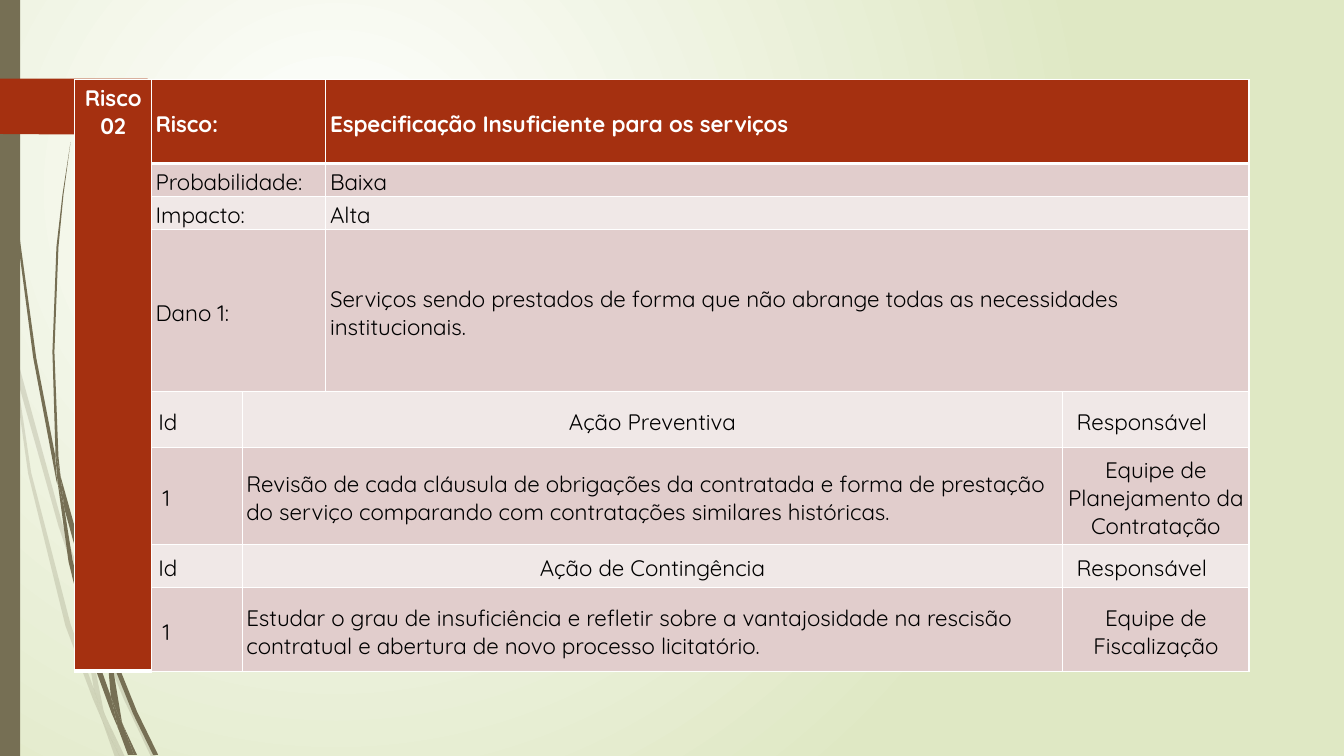
from lxml.etree import SubElement
from pptx import Presentation
from pptx.dml.color import RGBColor
from pptx.enum.shapes import MSO_SHAPE
from pptx.enum.text import MSO_ANCHOR, PP_ALIGN
from pptx.oxml.ns import qn
from pptx.util import Pt

FONT = "Quicksand"
RED, OLIVE, WHITE, BLACK = "A53010", "766F54", "FFFFFF", "000000"
DARK_BAND, LIGHT_BAND = "E1CDCC", "F0E8E7"

# Outlines in hundredths of an inch, the unit that UNIT stands for
UNIT = Pt(0.72)
PALE_STALKS = [
    [(11, 350), (9, 322), (0, 282), (0, 299), (10, 344)],
    [(58, 522), (84, 599), (85, 586), (62, 520), (14, 345), (17, 376)],
    [(92, 607), (88, 596), (88, 610), (123, 694), (150, 751), (155, 751), (127, 692)],
    [(119, 751), (124, 751), (105, 711)],
    [(93, 683), (70, 619), (31, 469), (17, 376), (11, 350), (28, 470), (65, 621),
     (92, 693), (101, 714), (99, 707)],
    [(84, 599), (87, 646), (93, 683), (96, 692), (105, 711), (103, 706), (91, 646),
     (88, 610), (88, 608)],
    [(88, 584), (110, 462), (160, 349), (229, 245), (268, 198), (290, 175), (312, 154),
     (312, 153), (289, 175), (268, 197), (228, 244), (158, 348), (107, 461), (85, 584),
     (85, 586), (88, 596)],
    [(101, 714), (114, 751), (119, 751)],
    [(88, 608), (88, 610), (88, 596), (85, 586), (84, 599)],
    [(96, 692), (93, 683), (99, 707), (101, 714), (119, 751), (105, 711)],
]
DARK_STALKS = [
    [(7, 110), (17, 233), (33, 355), (56, 477), (57, 481), (55, 457), (55, 453),
     (36, 355), (19, 232), (8, 109), (5, 48), (4, 0), (3, 0), (4, 48)],
    [(88, 592), (106, 645), (106, 631), (93, 590), (60, 472), (64, 505)],
    [(113, 649), (110, 641), (111, 656), (132, 708), (152, 749), (157, 749), (136, 706)],
    [(110, 691), (98, 657), (72, 556), (64, 505), (57, 477), (68, 557), (93, 659),
     (111, 708), (117, 722), (116, 717)],
    [(60, 472), (58, 453), (54, 349), (58, 245), (63, 193), (70, 141), (62, 193),
     (56, 245), (52, 349), (55, 449)],
    [(133, 749), (136, 749), (122, 719)],
    [(57, 477), (64, 505), (60, 472), (55, 449), (55, 453)],
    [(111, 633), (125, 552), (158, 476), (205, 406), (231, 374), (245, 359), (261, 344),
     (260, 344), (245, 358), (231, 373), (204, 405), (156, 474), (122, 551), (106, 631),
     (110, 641)],
    [(117, 722), (127, 749), (131, 749)],
    [(106, 645), (110, 691), (116, 706), (122, 719), (121, 716), (111, 656), (109, 651)],
    [(106, 645), (109, 651), (111, 656), (110, 641), (106, 631)],
    [(116, 706), (110, 691), (116, 717), (117, 722), (130, 749), (133, 749), (122, 719)],
]
SIDE_TAG = [(0, 78), (146, 78), (148, 79), (173, 104), (174, 106), (173, 108),
            (148, 133), (146, 134), (0, 133)]

COLUMN_WIDTHS = [54.7, 64.8, 59.8, 526.3, 133.2]
ROW_HEIGHTS = [60, 23.5, 23.5, 115.7, 40, 69.3, 30.7, 60]
# Each row after the red column: (first column, last column, text, left indent)
# An indent of None centres the text
ROWS = [
    [(1, 2, "Risco:", 0), (3, 4, "Especificação Insuficiente para os serviços", 0)],
    [(1, 2, "Probabilidade:", 0), (3, 4, "Baixa", 0)],
    [(1, 2, "Impacto:", 0), (3, 4, "Alta", 0)],
    [(1, 2, "Dano 1:", 0),
     (3, 4, "Serviços sendo prestados de forma que não abrange todas as "
            "necessidades institucionais.", 0)],
    [(1, 1, "Id", 2), (2, 3, "Ação Preventiva", None), (4, 4, "Responsável", 7)],
    [(1, 1, "1", 5),
     (2, 3, "Revisão de cada cláusula de obrigações da contratada e forma de prestação "
            "do serviço comparando com contratações similares históricas.", 0),
     (4, 4, "Equipe de\nPlanejamento da Contratação", None)],
    [(1, 1, "Id", 2), (2, 3, "Ação de Contingência", None), (4, 4, "Responsável", 7)],
    [(1, 1, "1", 5),
     (2, 3, "Estudar o grau de insuficiência e refletir sobre a vantajosidade na rescisão "
            "contratual e abertura de novo processo licitatório.", 0),
     (4, 4, "Equipe de Fiscalização", None)],
]


def color(value):
    return RGBColor.from_string(value)


def paint(shape, value, alpha=None):
    shape.shadow.inherit = False
    shape.fill.solid()
    shape.fill.fore_color.rgb = color(value)
    shape.line.fill.background()
    if alpha:
        tint = shape.fill._xPr.find(qn("a:solidFill"))[0]
        SubElement(tint, qn("a:alpha"), val=str(alpha * 1000))


def add_outline(page, points, value, alpha=None):
    builder = page.shapes.build_freeform(*points[0], scale=UNIT)
    builder.add_line_segments(points[1:], close=True)
    paint(builder.convert_to_shape(), value, alpha)


def set_background(page):
    fill = page.background.fill
    fill.gradient()
    for stop, value in zip(fill.gradient_stops, (WHITE, "DFE8C4")):
        stop.color.rgb = color(value)
    gradient = next(page._element.iter(qn("a:gradFill")))
    gradient.remove(gradient.find(qn("a:lin")))
    circle = SubElement(gradient, qn("a:path"), path="circle")
    SubElement(circle, qn("a:fillToRect"), l="50000", t="50000", r="100000", b="100000")


def add_borders(cell, top, bottom):
    properties = cell._tc.get_or_add_tcPr()
    for position, (side, width) in enumerate(
            [("lnL", 1), ("lnR", 1), ("lnT", top), ("lnB", bottom)]):
        line = properties.makeelement(qn("a:" + side), {"w": str(Pt(width))})
        properties.insert(position, line)
        SubElement(SubElement(line, qn("a:solidFill")), qn("a:srgbClr"), val=WHITE)


def fill_cell(cell, text, indent, background, anchor, top=1, bottom=1):
    header = background == RED
    cell.text = text
    cell.vertical_anchor = anchor
    cell.margin_left = cell.margin_right = Pt(3)
    cell.margin_top, cell.margin_bottom = Pt(3.6), Pt(0)
    cell.fill.solid()
    cell.fill.fore_color.rgb = color(background)
    for para in cell.text_frame.paragraphs:
        para.alignment = PP_ALIGN.CENTER if indent is None else PP_ALIGN.LEFT
        if indent:
            para._p.get_or_add_pPr().set("marL", str(Pt(indent)))
        para.font.name, para.font.size, para.font.bold = FONT, Pt(16), header
        para.font.color.rgb = color(WHITE if header else BLACK)
    add_borders(cell, top, bottom)


def add_risk_table(page):
    frame = page.shapes.add_table(len(ROW_HEIGHTS), len(COLUMN_WIDTHS), Pt(53.5), Pt(56.8),
                                  Pt(sum(COLUMN_WIDTHS)), Pt(sum(ROW_HEIGHTS)))
    table = frame.table
    table.first_row = table.horz_banding = False
    for column, width in zip(table.columns, COLUMN_WIDTHS):
        column.width = Pt(width)
    for row, height in zip(table.rows, ROW_HEIGHTS):
        row.height = Pt(height)

    # Red column with the risk number
    number = table.cell(0, 0)
    number.merge(table.cell(len(ROWS) - 1, 0))
    fill_cell(number, "Risco 02", None, RED, MSO_ANCHOR.TOP, bottom=3)

    # Header row, then alternating bands
    for index, entries in enumerate(ROWS):
        background = RED if index == 0 else DARK_BAND if index % 2 else LIGHT_BAND
        for first, last, text, indent in entries:
            cell = table.cell(index, first)
            if last > first:
                cell.merge(table.cell(index, last))
            fill_cell(cell, text, indent, background, MSO_ANCHOR.MIDDLE,
                      top=3 if index == 1 else 1, bottom=3 if index == 0 else 1)


def main():
    deck = Presentation()
    deck.slide_width, deck.slide_height = Pt(960), Pt(540)
    page = deck.slides.add_slide(deck.slide_layouts[6])
    set_background(page)

    # Grass stalks, side bar and tag
    for stalk in PALE_STALKS:
        add_outline(page, stalk, OLIVE, alpha=20)
    for stalk in DARK_STALKS:
        add_outline(page, stalk, OLIVE)
    bar = page.shapes.add_shape(MSO_SHAPE.RECTANGLE, 0, 0, Pt(14.4), Pt(540))
    paint(bar, OLIVE)
    add_outline(page, SIDE_TAG, RED)

    add_risk_table(page)
    deck.save("out.pptx")


if __name__ == "__main__":
    main()
